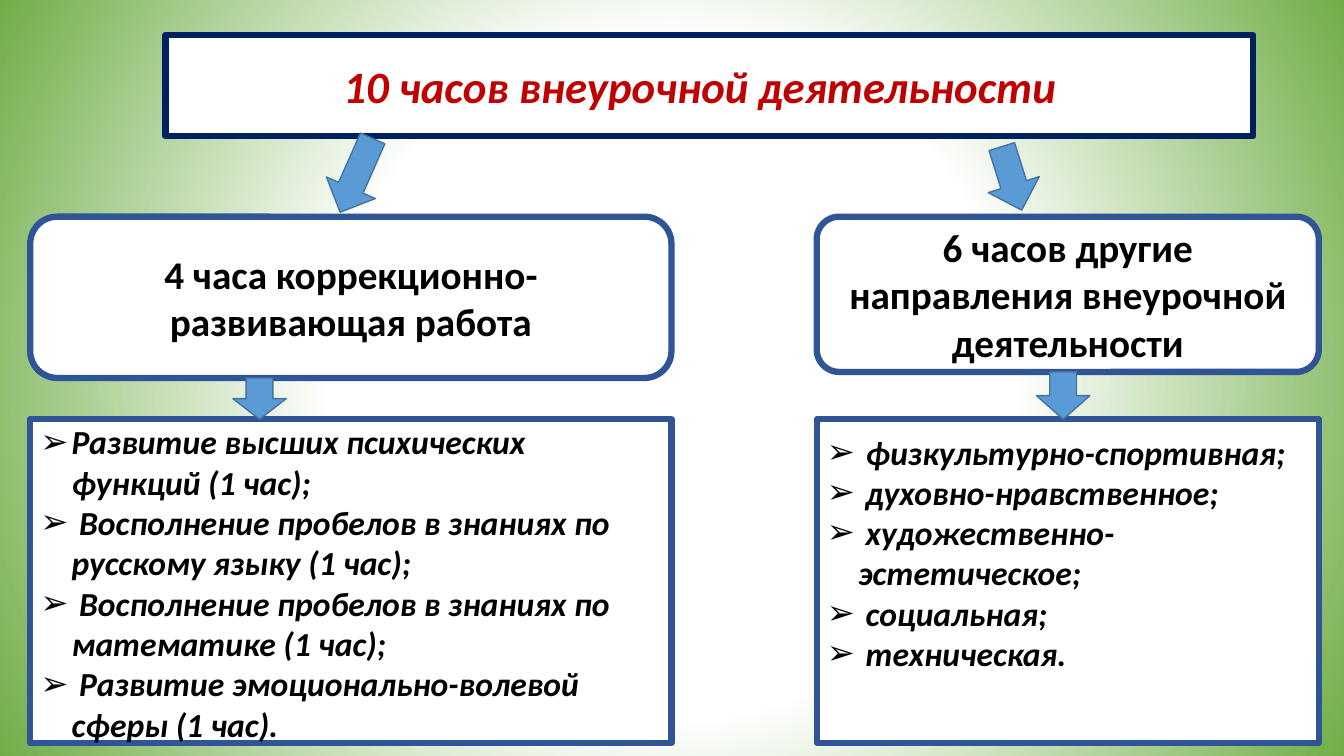
import pptx
import pptx.util
import pptx.dml.color
import pptx.enum.shapes
import pptx.enum.text
import pptx.oxml
import pptx.oxml.ns
from lxml import etree

Inches = pptx.util.Inches
Pt = pptx.util.Pt
RGBColor = pptx.dml.color.RGBColor
Shape = pptx.enum.shapes.MSO_SHAPE
Anchor = pptx.enum.text.MSO_ANCHOR
Align = pptx.enum.text.PP_ALIGN
qn = pptx.oxml.ns.qn

WHITE = RGBColor(0xFF, 0xFF, 0xFF)
BLACK = RGBColor(0, 0, 0)
RED = RGBColor(0xC0, 0, 0)
NAVY = RGBColor(0, 0x20, 0x60)
FRAME_BLUE = RGBColor(0x2F, 0x55, 0x97)
ARROW_BLUE = RGBColor(0x5B, 0x9B, 0xD5)
ARROW_EDGE = RGBColor(0x43, 0x73, 0x9E)
GREEN = RGBColor(0x70, 0xAD, 0x47)

FONT = "Calibri"
FRAME_WIDTH = 4.5
LIST_TOP, LIST_HEIGHT = 4.16, 3.21
LIST_INDENT = Inches(0.31)

# Left edge and width of the two columns
LEFT_COLUMN = (0.3, 6.36)
RIGHT_COLUMN = (8.1, 4.98)

CORRECTION_ITEMS = [
    "Развитие высших психических функций (1 час);",
    " Восполнение пробелов в знаниях по русскому языку (1 час);",
    " Восполнение пробелов в знаниях по математике (1 час);",
    " Развитие эмоционально-волевой сферы (1 час).",
]
OTHER_ITEMS = [
    " физкультурно-спортивная;",
    " духовно-нравственное;",
    " художественно-эстетическое;",
    " социальная;",
    " техническая.",
]


def set_background(slide):
    """Radial gradient: white centre, green edges."""
    background = pptx.oxml.parse_xml(
        f'<p:bg {pptx.oxml.ns.nsdecls("p", "a")}><p:bgPr><a:gradFill><a:gsLst>'
        f'<a:gs pos="0"><a:srgbClr val="{WHITE}"/></a:gs>'
        f'<a:gs pos="44000"><a:srgbClr val="{WHITE}"><a:alpha val="44000"/></a:srgbClr></a:gs>'
        f'<a:gs pos="100000"><a:srgbClr val="{GREEN}"/></a:gs></a:gsLst>'
        '<a:path path="circle"><a:fillToRect l="50000" t="50000" r="50000" b="50000"/></a:path>'
        '</a:gradFill><a:effectLst/></p:bgPr></p:bg>')
    slide.element.cSld.insert(0, background)


def place(shape, left, top, width, height):
    shape.left, shape.top = Inches(left), Inches(top)
    shape.width, shape.height = Inches(width), Inches(height)


def paint(shape, fill, line, line_width):
    shape.fill.solid()
    shape.fill.fore_color.rgb = fill
    shape.line.color.rgb = line
    shape.line.width = Pt(line_width)


def add_run(paragraph, text, size, color=BLACK, italic=False):
    run = paragraph.add_run()
    run.text = text
    font = run.font
    font.name, font.size, font.bold, font.italic = FONT, Pt(size), True, italic
    font.color.rgb = color


def prepare_text(shape, anchor):
    frame = shape.text_frame
    frame.word_wrap = True
    frame.auto_size = pptx.enum.text.MSO_AUTO_SIZE.NONE
    frame.vertical_anchor = anchor
    return frame


def fill_title(title, text):
    place(title, 1.64, 0.35, 10.79, 1)
    geometry = etree.SubElement(title.element.spPr, qn("a:prstGeom"), prst="ellipse")
    etree.SubElement(geometry, qn("a:avLst"))
    paint(title, WHITE, NAVY, FRAME_WIDTH)
    frame = prepare_text(title, Anchor.MIDDLE)
    frame.margin_left, frame.margin_right = Inches(0), Inches(0.18)
    paragraph = frame.paragraphs[0]
    paragraph.alignment = Align.CENTER
    add_run(paragraph, text, 32, RED, italic=True)


def add_heading(slide, column, height, corner, text):
    left, width = column
    heading = slide.shapes.add_shape(Shape.ROUNDED_RECTANGLE, Inches(left), Inches(2.15),
                                     Inches(width), Inches(height))
    heading.adjustments[0] = corner
    heading.shadow.inherit = False
    paint(heading, WHITE, FRAME_BLUE, FRAME_WIDTH)
    paragraph = prepare_text(heading, Anchor.MIDDLE).paragraphs[0]
    paragraph.alignment = Align.CENTER
    add_run(paragraph, text, 28)


def add_arrow(slide, left, top, height, rotation=0):
    arrow = slide.shapes.add_shape(Shape.DOWN_ARROW, Inches(left), Inches(top),
                                   Inches(0.53), Inches(height))
    arrow.rotation = rotation
    arrow.shadow.inherit = False
    paint(arrow, ARROW_BLUE, ARROW_EDGE, 1)


def fill_list(body, column, top_margin, items):
    left, width = column
    place(body, left, LIST_TOP, width, LIST_HEIGHT)
    paint(body, WHITE, FRAME_BLUE, FRAME_WIDTH)
    frame = prepare_text(body, Anchor.TOP)
    frame.margin_top, frame.margin_bottom = Inches(top_margin), Inches(0)
    for index, item in enumerate(items):
        paragraph = frame.add_paragraph() if index else frame.paragraphs[0]
        paragraph.alignment = Align.LEFT
        paragraph.space_before = Pt(0)
        add_run(paragraph, item, 24, italic=True)
        # Arrowhead bullet with a hanging indent
        properties = paragraph._p.get_or_add_pPr()
        properties.set("marL", str(LIST_INDENT))
        properties.set("indent", str(-LIST_INDENT))
        etree.SubElement(properties, qn("a:buFont"), typeface="Arial")
        etree.SubElement(properties, qn("a:buChar"), char="➢")


def main():
    presentation = pptx.Presentation()
    presentation.slide_width = Inches(13.33)
    presentation.slide_height = Inches(7.5)
    two_content = presentation.slide_layouts[3]
    slide = presentation.slides.add_slide(two_content)
    set_background(slide)

    # Title and lists
    title, correction_list, other_list = slide.placeholders
    fill_title(title, "10 часов внеурочной деятельности")
    fill_list(correction_list, LEFT_COLUMN, 0.02, CORRECTION_ITEMS)
    fill_list(other_list, RIGHT_COLUMN, 0.12, OTHER_ITEMS)

    # Column headings
    add_heading(slide, LEFT_COLUMN, 1.6, 0.167, "4 часа коррекционно-развивающая работа")
    add_heading(slide, RIGHT_COLUMN, 1.54, 0.145,
                "6 часов другие направления внеурочной деятельности")

    # Arrows from title to headings, then from headings to lists
    add_arrow(slide, 3.27, 1.34, 0.8, 23.8)
    add_arrow(slide, 9.77, 1.44, 0.66, 342.6)
    add_arrow(slide, 2.31, 3.75, 0.41)
    add_arrow(slide, 10.28, 3.69, 0.47)

    presentation.save("out.pptx")


if __name__ == "__main__":
    main()
